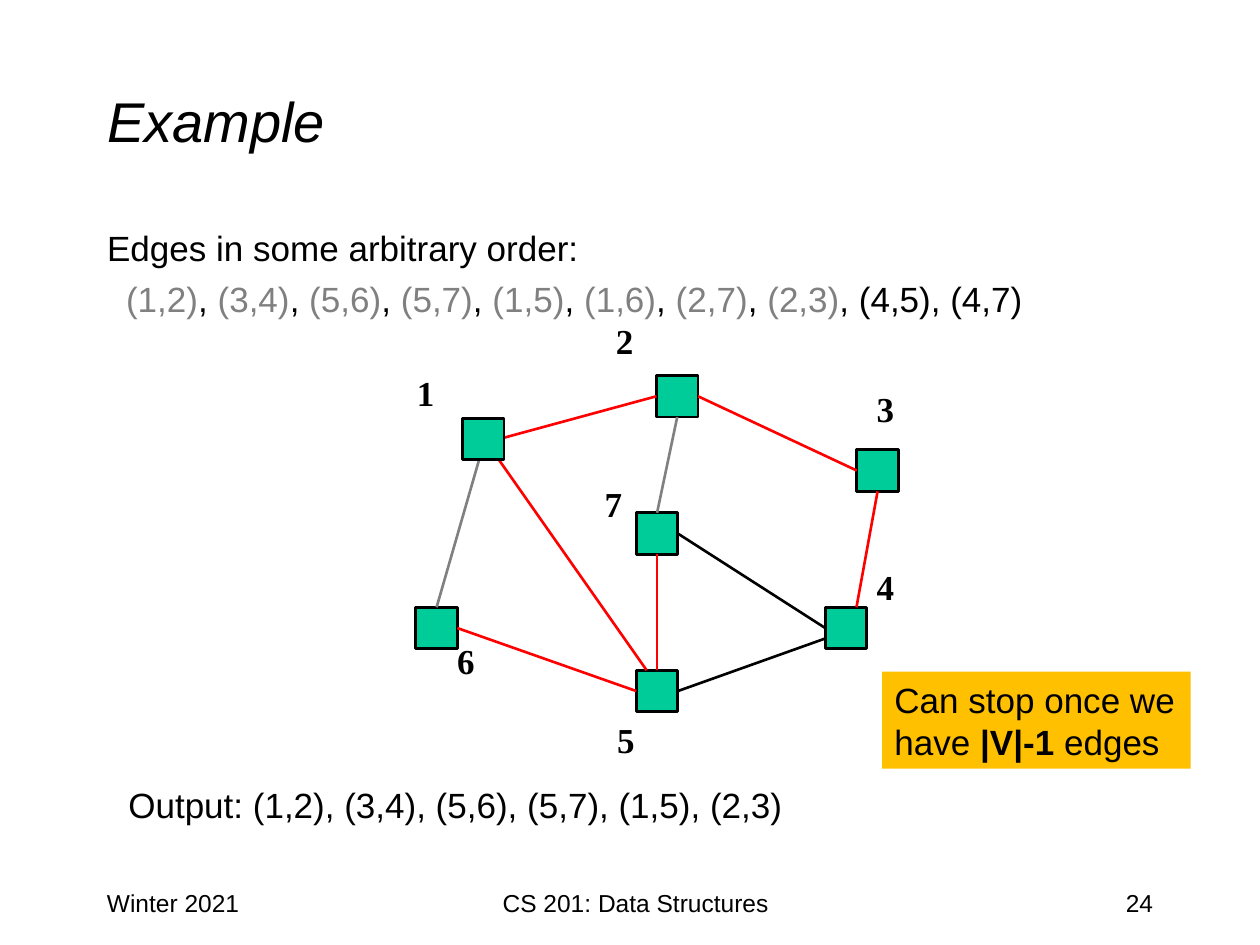
"""Builds a slide that steps through a spanning tree example on a seven-node graph."""
from lxml.etree import SubElement
from pptx import Presentation
from pptx.dml.color import RGBColor
from pptx.enum.shapes import MSO_CONNECTOR as Connector, MSO_SHAPE as Shape
from pptx.enum.text import MSO_ANCHOR as Anchor, MSO_AUTO_SIZE as AutoSize, PP_ALIGN as Align
from pptx.oxml.ns import qn
from pptx.util import Inches, Pt

COLORS = {
    "black": "000000",
    "gray": "808080",
    "red": "FF0000",
    "green": "00CC99",
    "amber": "FFC000",
}
NODE_SIZE = 0.33
NODES = {
    "6": (3.3, 4.82),
    "5": (5.05, 5.32),
    "4": (6.55, 4.82),
    "7": (5.05, 4.07),
    "2": (5.21, 2.98),
    "3": (6.8, 3.57),
    "1": (3.67, 3.32),
}
LABELS = {
    "1": (3.21, 2.9),
    "2": (4.79, 2.49),
    "3": (6.86, 3.03),
    "4": (6.86, 4.44),
    "5": (4.8, 5.65),
    "6": (3.53, 5.03),
    "7": (4.7, 3.78),
}
LEFT, RIGHT, TOP, BOTTOM = (0, 0.5), (1, 0.5), (0.5, 0), (0.5, 1)
EDGES = [
    ("1", (0.88, 0.5), "2", LEFT, "red"),
    ("2", BOTTOM, "7", TOP, "gray"),
    ("2", RIGHT, "3", LEFT, "red"),
    ("7", RIGHT, "4", LEFT, "black"),
    ("3", BOTTOM, "4", (0.75, 0), "red"),
    ("7", BOTTOM, "5", TOP, "red"),
    ("5", RIGHT, "4", (0, 0.75), "black"),
    ("6", RIGHT, "5", LEFT, "red"),
    ("1", (0.4, 1), "6", TOP, "gray"),
    ("1", (0.88, 1), "5", (0.25, 0), "red"),
]
VISITED = ["(1,2)", "(3,4)", "(5,6)", "(5,7)", "(1,5)", "(1,6)", "(2,7)", "(2,3)"]
REMAINING = "(4,5), (4,7)"


class SlideBuilder:
    """Holds the text and line style and the slide being filled."""

    font = "Arial"
    label_font = "Times New Roman"
    size = 20
    line_width = 1.5

    def __init__(self, slide):
        self.slide = slide

    def color(self, name):
        return RGBColor.from_string(COLORS[name])

    def style(self, para, size=None, font=None, bold=False, italic=False, align=Align.LEFT):
        para.alignment = align
        para.font.name = font or self.font
        para.font.size = Pt(size or self.size)
        para.font.bold = bold
        para.font.italic = italic
        para.font.color.rgb = self.color("black")

    def place(self, shape, at):
        shape.left, shape.top, shape.width, shape.height = map(Inches, at)

    def title(self, text, at):
        title = self.slide.shapes.title
        self.place(title, at)
        frame = title.text_frame
        frame.text = text
        frame.vertical_anchor = Anchor.MIDDLE
        self.style(frame.paragraphs[0], size=32, italic=True)

    def body(self, at, lines):
        body = self.slide.placeholders[1]
        self.place(body, at)
        frame = body.text_frame
        frame.auto_size = AutoSize.NONE
        for index, (indent, spans) in enumerate(lines):
            para = frame.add_paragraph() if index else frame.paragraphs[0]
            para.space_before = Pt(5)
            properties = para._p.get_or_add_pPr()
            properties.set("marL", str(Inches(indent)))
            properties.set("indent", "0")
            SubElement(properties, qn("a:buNone"))
            self.style(para)
            for text, color in spans:
                span = para.add_run()
                span.text = text
                span.font.color.rgb = self.color(color)

    def text(self, text, at, wrap=True, space_before=0, **style):
        box = self.slide.shapes.add_textbox(*map(Inches, at))
        frame = box.text_frame
        frame.word_wrap = wrap
        frame.text = text
        para = frame.paragraphs[0]
        para.space_before = Pt(space_before)
        self.style(para, **style)

    def rectangle(self, at, fill):
        box = self.slide.shapes.add_shape(Shape.RECTANGLE, *map(Inches, at))
        box.shadow.inherit = False
        box.fill.solid()
        box.fill.fore_color.rgb = self.color(fill)
        return box

    def node(self, name):
        box = self.rectangle((*NODES[name], NODE_SIZE, NODE_SIZE), "green")
        box.line.color.rgb = self.color("black")
        box.line.width = Pt(self.line_width)

    def label(self, name):
        self.text(name, (*LABELS[name], 0.34, 0.44), wrap=False,
                  font=self.label_font, bold=True)

    def edge(self, start, start_side, end, end_side, color):
        points = [
            Inches(corner + NODE_SIZE * share)
            for name, side in ((start, start_side), (end, end_side))
            for corner, share in zip(NODES[name], side)
        ]
        line = self.slide.shapes.add_connector(Connector.STRAIGHT, *points)
        line.line.color.rgb = self.color(color)
        line.line.width = Pt(self.line_width)
        SubElement(line._element.spPr, qn("a:effectLst"))

    def callout(self, at, lines):
        box = self.rectangle(at, "amber")
        box.line.fill.background()
        frame = box.text_frame
        frame.word_wrap = False
        for index, spans in enumerate(lines):
            para = frame.add_paragraph() if index else frame.paragraphs[0]
            self.style(para)
            for text, bold in spans:
                span = para.add_run()
                span.text = text
                span.font.bold = bold
                span.font.color.rgb = self.color("black")


def main():
    deck = Presentation()
    deck.slide_width, deck.slide_height = Inches(10), Inches(7.5)
    page = SlideBuilder(deck.slides.add_slide(deck.slide_layouts[1]))

    page.title("Example", (0.75, 0.33, 8.5, 1.25))
    edge_order = [span for pair in VISITED for span in ((pair, "gray"), (", ", "black"))]
    page.body((0.75, 1.75, 8.5, 4.92), [
        (0, [("Edges in some arbitrary order:", "black")]),
        (0.15, edge_order + [(REMAINING, "black")]),
    ])

    page.text("Winter 2021", (0.75, 7, 2.08, 0.5), size=14)
    page.text("24", (7.17, 7, 2.08, 0.5), size=14, align=Align.RIGHT)
    page.text("CS 201: Data Structures", (3.17, 7, 3.75, 0.5), size=14, align=Align.CENTER)

    *back_nodes, front_node = NODES
    for name in back_nodes:
        page.node(name)
    for edge in EDGES:
        page.edge(*edge)
    for name in LABELS:
        page.label(name)
    page.node(front_node)

    page.text("Output: (1,2), (3,4), (5,6), (5,7), (1,5), (2,3)",
              (0.92, 6.17, 7.75, 0.58), space_before=5)
    page.callout((7, 5.33, 2.45, 0.77), [
        [("Can stop once we", False)],
        [("have ", False), ("|V|-1 ", True), ("edges", False)],
    ])
    deck.save("out.pptx")


if __name__ == "__main__":
    main()
